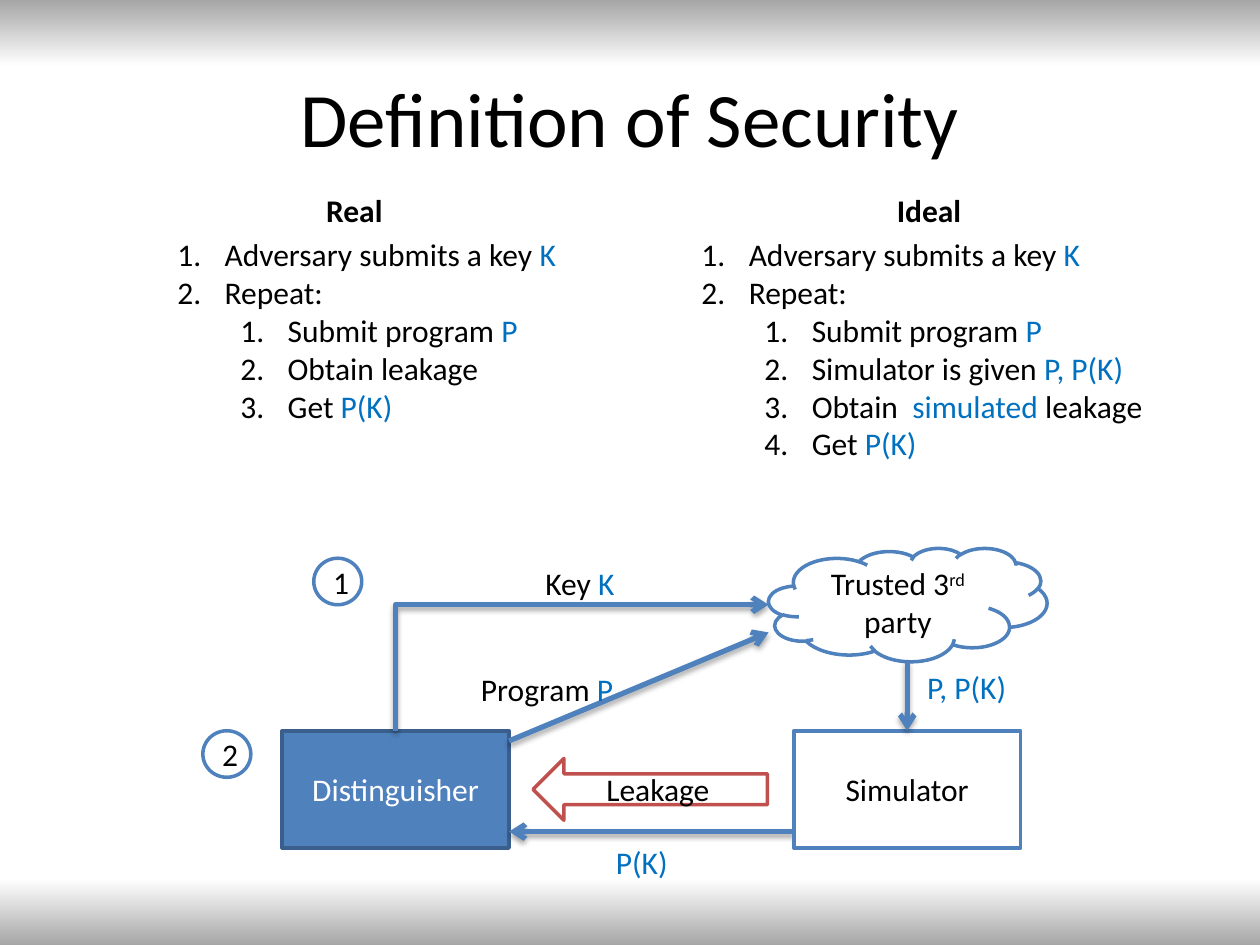
from lxml import etree
from pptx import Presentation
from pptx.dml.color import RGBColor
from pptx.enum.shapes import MSO_CONNECTOR, MSO_SHAPE
from pptx.enum.text import MSO_ANCHOR, MSO_AUTO_SIZE, PP_ALIGN
from pptx.oxml import parse_xml
from pptx.oxml.ns import nsdecls, qn
from pptx.util import Pt

STRAIGHT, ELBOW = MSO_CONNECTOR.STRAIGHT, MSO_CONNECTOR.ELBOW
RECT, OVAL, CLOUD = MSO_SHAPE.RECTANGLE, MSO_SHAPE.OVAL, MSO_SHAPE.CLOUD
LEFT_ARROW = MSO_SHAPE.LEFT_ARROW
LEFT, CENTER = PP_ALIGN.LEFT, PP_ALIGN.CENTER
TOP, MIDDLE = MSO_ANCHOR.TOP, MSO_ANCHOR.MIDDLE
GROW, FIXED = MSO_AUTO_SIZE.SHAPE_TO_FIT_TEXT, MSO_AUTO_SIZE.NONE

COLORS = {"black": "000000", "white": "FFFFFF", "term": "0070C0", "blue": "4F81BD",
          "navy": "3A5F8C", "red": "C0504D", "gray": "A6A6A6"}
FONT, BODY, HEADING = "Calibri", 18, 44
INDENT = 27

SHADOW = f"""<a:effectLst {nsdecls('a')}>
  <a:outerShdw blurRad="40000" dist="23000" dir="5400000" rotWithShape="0">
    <a:srgbClr val="000000"><a:alpha val="35000"/></a:srgbClr>
  </a:outerShdw></a:effectLst>"""


def rgb(name):
    return RGBColor.from_string(COLORS[name])


class Diagram:
    """Holds the text style and the slide being drawn; lengths are points."""

    def __init__(self, slide):
        self.s = slide

    def background(self, stops):
        fill = self.s.background.fill
        fill.gradient()
        fill.gradient_angle = 270
        gs_list = self.s._element.find(".//" + qn("a:gsLst"))
        for gs in list(gs_list):
            gs_list.remove(gs)
        for percent, color in stops:
            gs = etree.SubElement(gs_list, qn("a:gs"), pos=str(percent * 1000))
            etree.SubElement(gs, qn("a:srgbClr"), val=COLORS[color])

    def add_runs(self, p, runs, size=BODY, color="black", bold=False, align=LEFT):
        """Fill a paragraph; a run is a string or a (string, style) pair."""
        p.alignment = align
        for run in [runs] if isinstance(runs, str) else runs:
            text, style = (run, None) if isinstance(run, str) else run
            r = p.add_run()
            r.text = text
            r.font.name, r.font.size, r.font.bold = FONT, Pt(size), bold
            r.font.color.rgb = rgb("term" if style == "term" else color)
            if style == "super":
                r._r.get_or_add_rPr().set("baseline", "30000")

    def box(self, x, y, w, h, wrap=True, anchor=TOP, size_mode=GROW):
        tf = self.s.shapes.add_textbox(Pt(x), Pt(y), Pt(w), Pt(h)).text_frame
        tf.word_wrap, tf.vertical_anchor, tf.auto_size = wrap, anchor, size_mode
        return tf

    def title(self, text):
        tf = self.box(36, 21.6, 648, 90, anchor=MIDDLE, size_mode=FIXED)
        self.add_runs(tf.paragraphs[0], text, HEADING, align=CENTER)

    def label(self, x, y, w, runs, bold=False):
        tf = self.box(x, y, w, 29, wrap=False)
        self.add_runs(tf.paragraphs[0], runs, bold=bold)

    def steps(self, x, y, w, h, items):
        """Numbered list of (level, runs) items."""
        tf = self.box(x, y, w, h)
        for i, (level, runs) in enumerate(items):
            p = tf.add_paragraph() if i else tf.paragraphs[0]
            p.level = level
            pPr = p._p.get_or_add_pPr()
            pPr.set("marL", str(Pt(INDENT + 36 * level)))
            pPr.set("indent", str(-Pt(INDENT)))
            etree.SubElement(pPr, qn("a:buFont"), typeface="+mj-lt")
            etree.SubElement(pPr, qn("a:buAutoNum"), type="arabicPeriod")
            self.add_runs(p, runs)

    def shape(self, kind, x, y, w, h, runs, fill="white", line="blue", color="black"):
        sp = self.s.shapes.add_shape(kind, Pt(x), Pt(y), Pt(w), Pt(h))
        sp.shadow.inherit = False
        sp.fill.solid()
        sp.fill.fore_color.rgb = rgb(fill)
        sp.line.color.rgb, sp.line.width = rgb(line), Pt(2)
        tf = sp.text_frame
        tf.word_wrap, tf.vertical_anchor = True, MIDDLE
        self.add_runs(tf.paragraphs[0], runs, color=color, align=CENTER)
        return sp

    def arrow(self, x1, y1, x2, y2, kind=STRAIGHT):
        c = self.s.shapes.add_connector(kind, Pt(x1), Pt(y1), Pt(x2), Pt(y2))
        c.line.color.rgb, c.line.width = rgb("blue"), Pt(3)
        spPr = c._element.spPr
        etree.SubElement(spPr.get_or_add_ln(), qn("a:tailEnd"), type="arrow")
        spPr.append(parse_xml(SHADOW))
        return c

    def corner_arrow(self, x1, y1, x2, y2):
        """Arrow that rises from the start, then turns right to the end."""
        cx, cy = (x1 + x2) / 2, (y1 + y2) / 2
        dx, dy = (y1 - y2) / 2, (x2 - x1) / 2
        c = self.arrow(cx + dx, cy + dy, cx - dx, cy - dy, ELBOW)
        spPr = c._element.spPr
        spPr.find(qn("a:xfrm")).set("rot", "5400000")
        spPr.find(qn("a:prstGeom")).set("prst", "bentConnector2")


def main():
    prs = Presentation()
    prs.slide_width, prs.slide_height = Pt(720), Pt(540)
    d = Diagram(prs.slides.add_slide(prs.slide_layouts[6]))
    d.background([(0, "gray"), (7, "white"), (93, "white"), (100, "gray")])
    d.title("Definition of Security")

    key, program, result = ("K", "term"), ("P", "term"), ("P(K)", "term")
    both = ("P, P(K)", "term")
    opening = [(0, ["Adversary submits a key ", key]), (0, "Repeat:"),
               (1, ["Submit program ", program])]
    closing = [(1, ["Get ", result])]
    d.steps(94.3, 131, 237.6, 116.6, opening + [(1, "Obtain leakage")] + closing)
    d.label(179.3, 105.8, 46.8, "Real", bold=True)
    d.label(505.4, 105.8, 51.8, "Ideal", bold=True)
    d.steps(393.8, 131, 271.4, 138.2, opening + [
        (1, ["Simulator is given ", both]),
        (1, ["Obtain  ", ("simulated", "term"), " leakage"])] + closing)

    box_y, box_w, box_h = 417.6, 129.6, 67
    left_x, right_x, cloud_x = 161.3, 453.6, 439.2
    left_edge = left_x + box_w
    d.shape(RECT, left_x, box_y, box_w, box_h, "Distinguisher", "blue", "navy", "white")
    d.shape(LEFT_ARROW, 304.6, 433.4, 133.9, 35.3, "Leakage", line="red")
    d.arrow(left_edge, 423.4, cloud_x, 361.4)
    d.label(267.8, 379.4, 90.7, ["Program ", program])
    d.arrow(right_x, 475.2, left_edge, 475.2)
    d.label(344.9, 478.1, 59.8, [result])
    d.corner_arrow(left_x + box_w / 2, box_y, cloud_x, 345.6)
    d.label(304.6, 319, 54.7, ["Key ", key])
    for number, x, y in [("1", 179.3, 319), ("2", 115.9, box_y)]:
        d.shape(OVAL, x, y, 27.4, 26.6, number)
    d.shape(CLOUD, cloud_x, 313.2, 159.1, 64.8, ["Trusted 3", ("rd", "super"), " party"])
    simulator = d.shape(RECT, right_x, box_y, box_w, box_h, "Simulator")
    down = d.arrow(right_x + box_w / 2, 378, right_x + box_w / 2, box_y)
    down.end_connect(simulator, 0)
    d.label(522.7, 378, 60.5, [both])

    prs.save("out.pptx")


if __name__ == "__main__":
    main()
